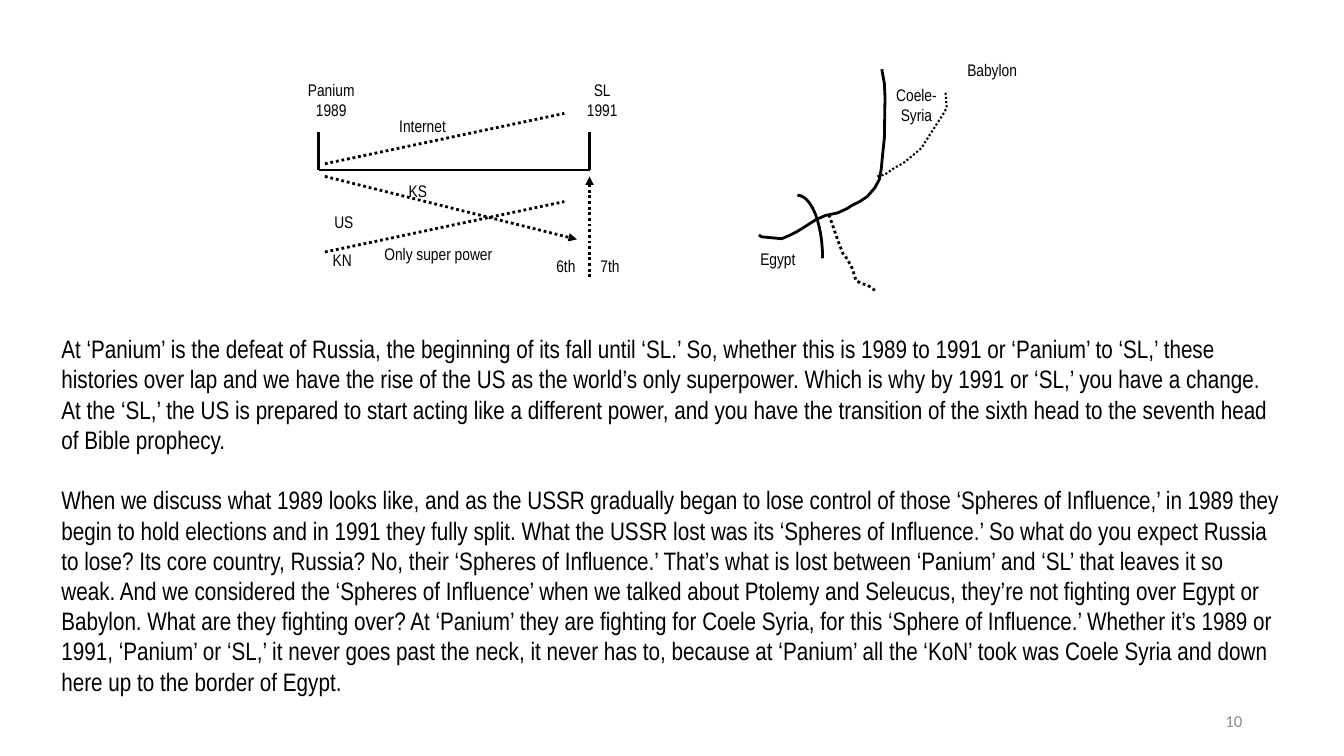
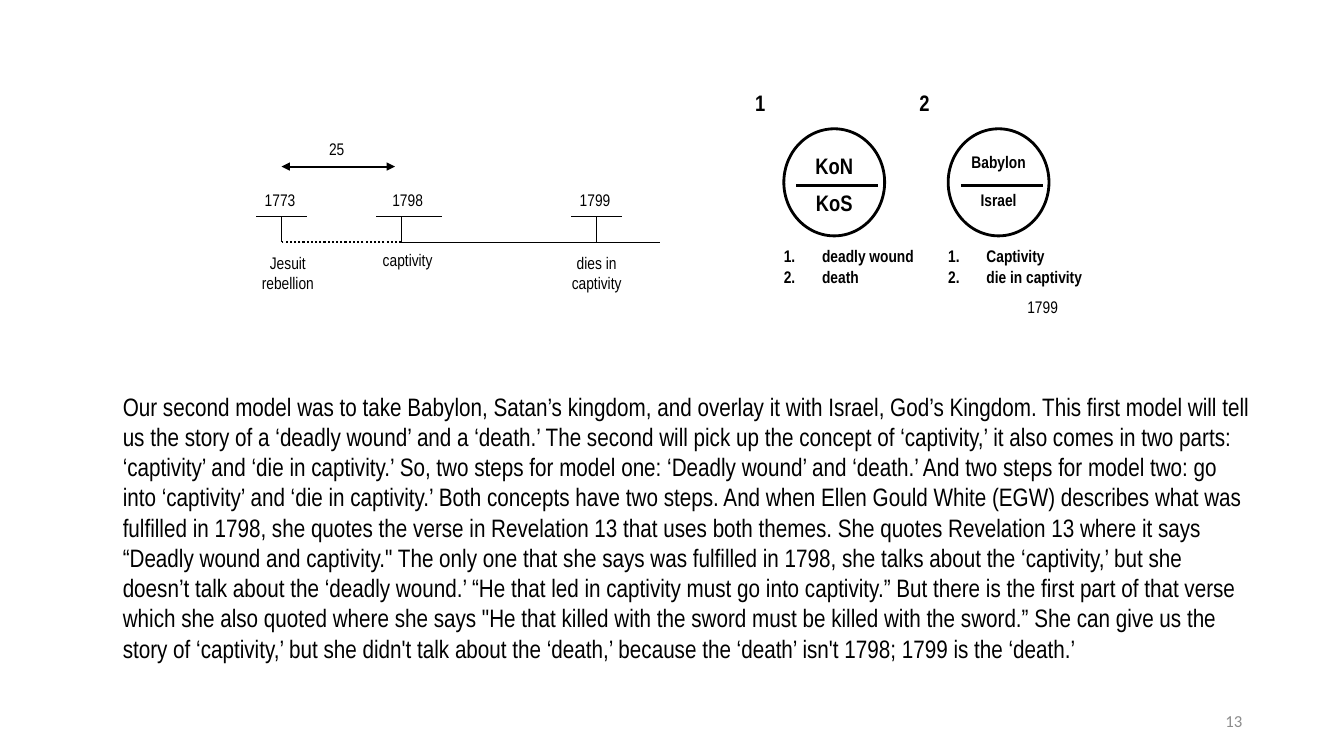
from dataclasses import dataclass
from math import cos, pi, sin

from lxml.etree import SubElement
from pptx import Presentation
from pptx.dml.color import RGBColor
from pptx.enum.dml import MSO_LINE
from pptx.enum.shapes import MSO_CONNECTOR, MSO_SHAPE
from pptx.enum.text import MSO_ANCHOR, PP_ALIGN as ALIGN
from pptx.oxml.ns import qn
from pptx.util import Inches, Pt

WIDTH, HEIGHT = 13.33, 7.5
CELL = 1 / 16  # inches per grid column and row
BLACK, GREY = "000000", "8C8C8C"
BODY_FONT, NUMBER_FONT = "Arial Narrow", "Calibri"
LABEL_SIZE, MODEL_SIZE, BODY_SIZE = 12, 16, 18
TIGHT, LOOSE = (0.04, 0.04), (0.1, 0.05)

# Each paragraph is a list of passages, joined by spaces
PANIUM_TEXT = [
    [
        "At ‘Panium’ is the defeat of Russia, the beginning of its fall until ‘SL.’",
        "So, whether this is 1989 to 1991 or ‘Panium’ to ‘SL,’ these histories over lap and",
        "we have the rise of the US as the world’s only superpower.",
        "Which is why by 1991 or ‘SL,’ you have a change.",
        "At the ‘SL,’ the US is prepared to start acting like a different power, and you have",
        "the transition of the sixth head to the seventh head of Bible prophecy.",
    ],
    [
        "When we discuss what 1989 looks like, and as the USSR gradually began to lose control",
        "of those ‘Spheres of Influence,’ in 1989 they begin to hold elections and in 1991",
        "they fully split. What the USSR lost was its ‘Spheres of Influence.’",
        "So what do you expect Russia to lose? Its core country, Russia?",
        "No, their ‘Spheres of Influence.’",
        "That’s what is lost between ‘Panium’ and ‘SL’ that leaves it so weak.",
        "And we considered the ‘Spheres of Influence’ when we talked about Ptolemy and",
        "Seleucus, they’re not fighting over Egypt or Babylon. What are they fighting over?",
        "At ‘Panium’ they are fighting for Coele Syria, for this ‘Sphere of Influence.’",
        "Whether it’s 1989 or 1991, ‘Panium’ or ‘SL,’ it never goes past the neck, it never",
        "has to, because at ‘Panium’ all the ‘KoN’ took was Coele Syria and down here up to",
        "the border of Egypt.",
    ],
]
CAPTIVITY_TEXT = [
    [
        "Our second model was to take Babylon, Satan’s kingdom, and overlay it with Israel,",
        "God’s Kingdom. This first model will tell us the story of a ‘deadly wound’ and a",
        "‘death.’ The second will pick up the concept of ‘captivity,’ it also comes in two",
        "parts: ‘captivity’ and ‘die in captivity.’ So, two steps for model one: ‘Deadly",
        "wound’ and ‘death.’ And two steps for model two: go into ‘captivity’ and ‘die in",
        "captivity.’ Both concepts have two steps. And when Ellen Gould White (EGW) describes",
        "what was fulfilled in 1798, she quotes the verse in Revelation 13 that uses both",
        "themes. She quotes Revelation 13 where it says",
        '“Deadly wound and captivity." The only one that she says was fulfilled in 1798,',
        "she talks about the ‘captivity,’ but she doesn’t talk about the ‘deadly wound.’",
        "“He that led in captivity must go into captivity.” But there is the first part of",
        "that verse which she also quoted where she says",
        '"He that killed with the sword must be killed with the sword.”',
        "She can give us the story of ‘captivity,’ but she didn't talk about the ‘death,’",
        "because the ‘death’ isn't 1798; 1799 is the ‘death.’",
    ],
]

# Map outlines as (column, row) points
COAST = [
    (22.5, 2.2), (22.9, 4.5), (23, 6.6), (22.9, 13.1), (22.6, 16), (22.4, 18.1),
    (22.1, 19.7), (21.4, 21), (20.2, 22.4), (19, 23.2), (17.8, 23.8), (17, 24.3),
    (15.5, 25), (13.6, 25.4), (12, 26.1), (10.6, 27), (9, 28), (7.8, 28.6),
    (6.6, 29.1), (3.4, 28.8), (3, 28.5),
]
FRONTIER = [
    (21.8, 19.2), (23, 18.9), (24.6, 17.8), (25.9, 17.1), (26.9, 16.3), (28.8, 14.7),
    (29.8, 13.1), (30.9, 11.4), (32.2, 9.4), (32.8, 8.3), (32.6, 5.6),
]
BORDER = [
    (14.1, 25.3), (14.4, 26.1), (15.5, 29.3), (16.3, 31.4), (17, 32.3), (17.8, 33.8),
    (18.4, 35.7), (19.2, 36.2), (20.3, 36.5), (21.4, 37.3),
]
NECK = [(9.1 + 4 * sin(step * pi / 24), 32.2 - 10 * cos(step * pi / 24)) for step in range(13)]


def color(hex_string):
    return RGBColor.from_string(hex_string)


def add_text(page, box, lines, size, font=BODY_FONT, ink=BLACK, bold=False,
             align=ALIGN.LEFT, insets=LOOSE, gap=0):
    """Place lines as paragraphs in a (left, top, width, height) box of inches."""
    frame = page.shapes.add_textbox(*map(Inches, box)).text_frame
    frame.word_wrap = True
    frame.margin_left = frame.margin_right = Inches(insets[0])
    frame.margin_top = frame.margin_bottom = Inches(insets[1])
    frame.text = "\n".join(lines)
    for index, para in enumerate(frame.paragraphs):
        para.alignment = align
        para.space_before = Pt(gap if index else 0)
        for span in para.runs:
            span.font.name, span.font.size, span.font.bold = font, Pt(size), bold
            span.font.color.rgb = color(ink)
    return frame


def style_line(shape, weight, dotted=False):
    shape.line.color.rgb = color(BLACK)
    shape.line.width = Pt(weight)
    if dotted:
        shape.line.dash_style = MSO_LINE.ROUND_DOT


def number_paragraphs(frame):
    for para in frame.paragraphs:
        properties = para._p.get_or_add_pPr()
        properties.set("marL", str(Inches(0.38)))
        properties.set("indent", str(-Inches(0.38)))
        SubElement(properties, qn("a:buAutoNum")).set("type", "arabicPeriod")


@dataclass
class Region:
    """A grid of cells on a page, with its corner at left, top."""
    page: object
    left: float
    top: float

    def point(self, column, row):
        return Inches(self.left + column * CELL), Inches(self.top + row * CELL)

    def label(self, column, row, columns, rows, *lines, size=LABEL_SIZE, bold=False,
              align=ALIGN.CENTER):
        box = (self.left + column * CELL, self.top + row * CELL, columns * CELL, rows * CELL)
        return add_text(self.page, box, lines, size, bold=bold, align=align, insets=TIGHT)

    def line(self, start, end, weight=2, dotted=False, arrows=()):
        connector = self.page.shapes.add_connector(
            MSO_CONNECTOR.STRAIGHT, *self.point(*start), *self.point(*end))
        style_line(connector, weight, dotted)
        properties = connector.element.spPr
        for arrow in arrows:
            SubElement(properties.find(qn("a:ln")), qn(f"a:{arrow}")).set("type", "triangle")
        SubElement(properties, qn("a:effectLst"))

    def curve(self, points, weight=2, dotted=False):
        start, *rest = [self.point(*point) for point in points]
        builder = self.page.shapes.build_freeform(*start)
        builder.add_line_segments(rest, close=False)
        self.outline(builder.convert_to_shape(), weight, dotted)

    def circle(self, column, row, columns, rows):
        shape = self.page.shapes.add_shape(
            MSO_SHAPE.OVAL, *self.point(column, row), Inches(columns * CELL), Inches(rows * CELL))
        self.outline(shape, 2)

    def outline(self, shape, weight, dotted=False):
        shape.shadow.inherit = False
        shape.fill.background()
        style_line(shape, weight, dotted)


def panium_timeline(region):
    first, last, axis = 4, 47, 15
    region.line((first, axis), (last, axis))
    for column in (first, last):
        region.line((column, axis), (column, 9))
    for row in (14, 28):
        region.line((5, row), (43, row - 8), dotted=True)
    region.line((5, 16), (45, 26), dotted=True, arrows=["tailEnd"])
    region.line((last, 32), (last, 16), dotted=True, arrows=["tailEnd"])
    for label in [
        (0, 0, 12, 8, "Panium", "1989"),
        (43, 0, 12, 8, "SL", "1991"),
        (11, 5.75, 19, 4, "Internet"),
        (17, 16, 5.5, 4, "KS"),
        (5, 21, 6, 4, "US"),
        (5, 27, 5.5, 4, "KN"),
        (12, 26, 22, 4, "Only super power"),
        (41, 28, 4.5, 5, "6th"),
        (48, 28, 4.5, 5, "7th"),
    ]:
        region.label(*label)


def coele_syria_map(region):
    region.curve(COAST)
    region.curve(FRONTIER, 1.5, dotted=True)
    region.curve(BORDER, dotted=True)
    region.curve(NECK)
    region.label(34, 0, 12, 5, "Babylon")
    region.label(0, 30, 12, 8, "Egypt")
    region.label(23, 4, 10, 9, "Coele-Syria")


def captivity_timeline(region):
    bar, axis = 13, 17
    stations = [
        # year, bar start and end, stem, caption middle, caption row, caption
        ("1773", 1, 9, 5, 6, 18, ["Jesuit", "rebellion"]),
        ("1798", 20, 30.5, 24, 25, 17.5, ["captivity"]),
        ("1799", 51, 59, 55, 55, 18, ["dies in", "captivity"]),
    ]
    for year, start, end, stem, middle, row, caption in stations:
        region.line((start, bar), (end, bar), 0.75)
        region.line((stem, bar), (stem, axis), 1)
        region.label((start + end) / 2 - 4, 8, 7.5, 4.5, year)
        region.label(middle - 7, row, 14, 9, *caption)
    region.line((24, axis), (65, axis), 0.75)
    region.line((24, axis), (5, axis), 1.5, dotted=True)
    region.line((5, 5), (23, 5), 1.5, arrows=["headEnd", "tailEnd"])
    region.label(10, 0, 7.5, 4.5, "25")


def kingdom_model(region, number, upper, lower, size, steps):
    """Draw a numbered circle, split into two kingdoms, over its list of steps."""
    region.label(0, 0, 8, 5.5, number, size=MODEL_SIZE, bold=True)
    region.circle(7.75, 7, 16, 17)
    region.line((9.75, 16), (22.75, 16))
    for row, name in ((10, upper), (16, lower)):
        region.label(10.75, row, 10, 5.5, name, size=size, bold=True)
    number_paragraphs(region.label(7.1, 25, 24, 10, *steps, bold=True, align=ALIGN.LEFT))


def add_page(deck, number, body_box, body):
    """Add a page with its body text and page number, the box in shares of the page."""
    page = deck.slides.add_slide(deck.slide_layouts[6])
    left, top, width, height = body_box
    add_text(page, (left * WIDTH, top * HEIGHT, width * WIDTH, height * HEIGHT),
             [" ".join(passages) for passages in body], BODY_SIZE, gap=21.5)
    footer = add_text(page, (9.42, 6.95, 3, 0.4), [number], 12, NUMBER_FONT, GREY,
                      align=ALIGN.RIGHT)
    footer.vertical_anchor = MSO_ANCHOR.MIDDLE
    return page


def panium_page(deck):
    page = add_page(deck, "10", (0.0383, 0.4347, 0.9227, 0.4987), PANIUM_TEXT)
    panium_timeline(Region(page, 2.91, 0.75))
    coele_syria_map(Region(page, 7.34, 0.55))


def captivity_page(deck):
    page = add_page(deck, "13", (0.084, 0.5107, 0.8567, 0.3773), CAPTIVITY_TEXT)
    captivity_timeline(Region(page, 2.48, 1.34))
    left, top, pitch = 7.29, 0.84, 1.63
    models = [
        ("1", "KoN", "KoS", MODEL_SIZE, ["deadly wound", "death"]),
        ("2", "Babylon", "Israel", LABEL_SIZE, ["Captivity", "die in captivity"]),
    ]
    for index, model in enumerate(models):
        kingdom_model(Region(page, left + index * pitch, top), *model)
    Region(page, left, top).label(45.75, 33, 10, 6, "1799", align=ALIGN.LEFT)


def main():
    deck = Presentation()
    deck.slide_width, deck.slide_height = Inches(WIDTH), Inches(HEIGHT)
    panium_page(deck)
    captivity_page(deck)
    deck.save("out.pptx")


if __name__ == "__main__":
    main()
